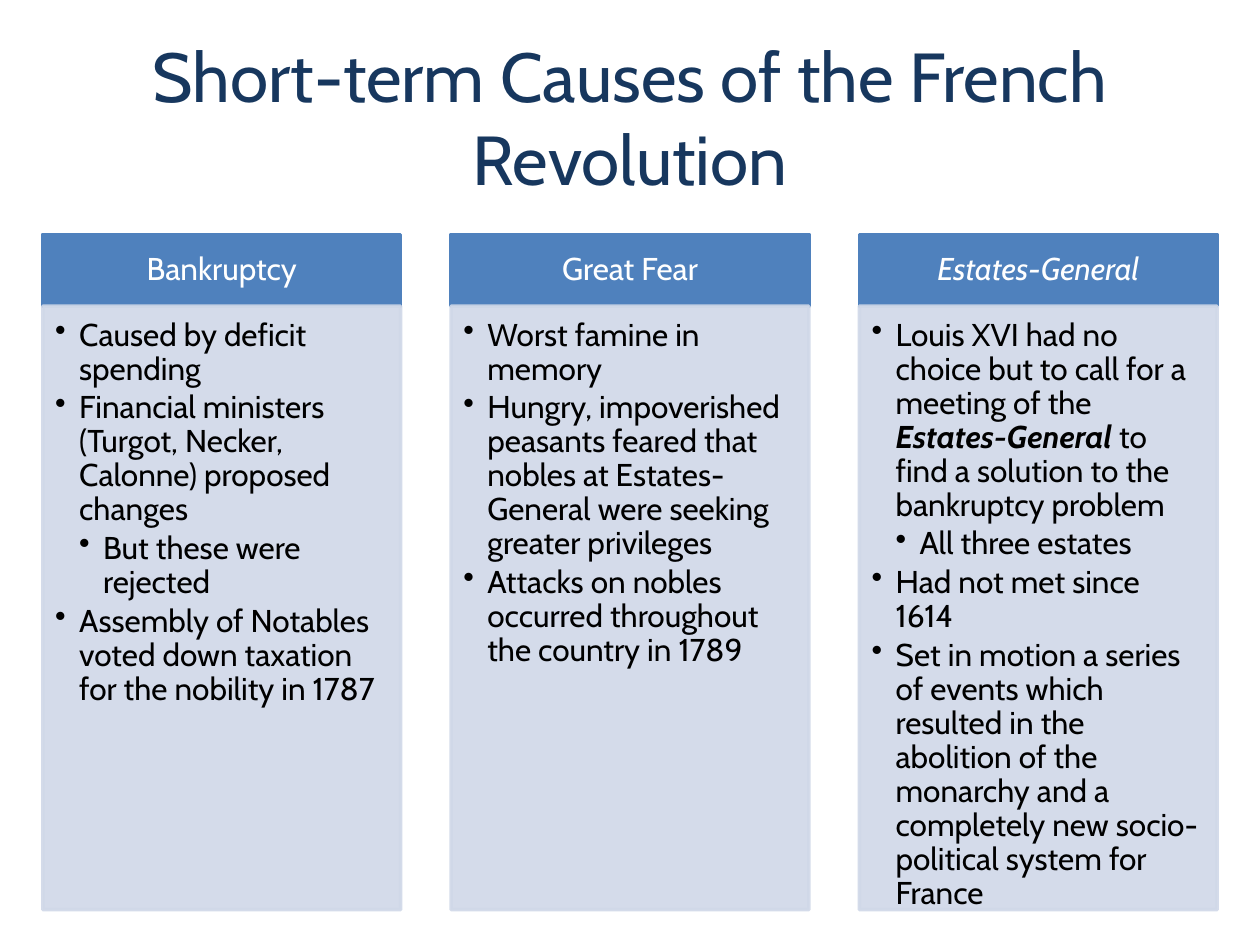
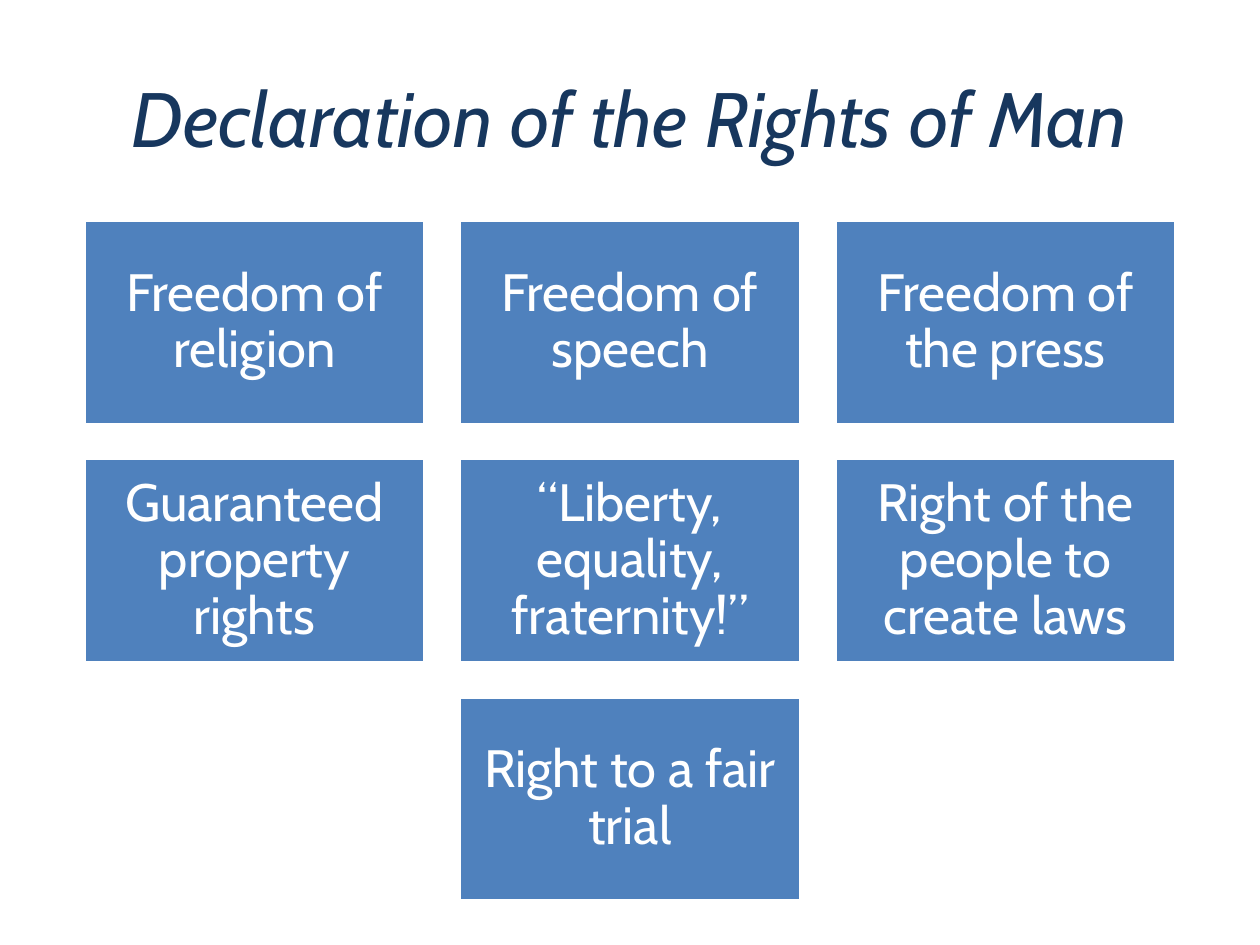
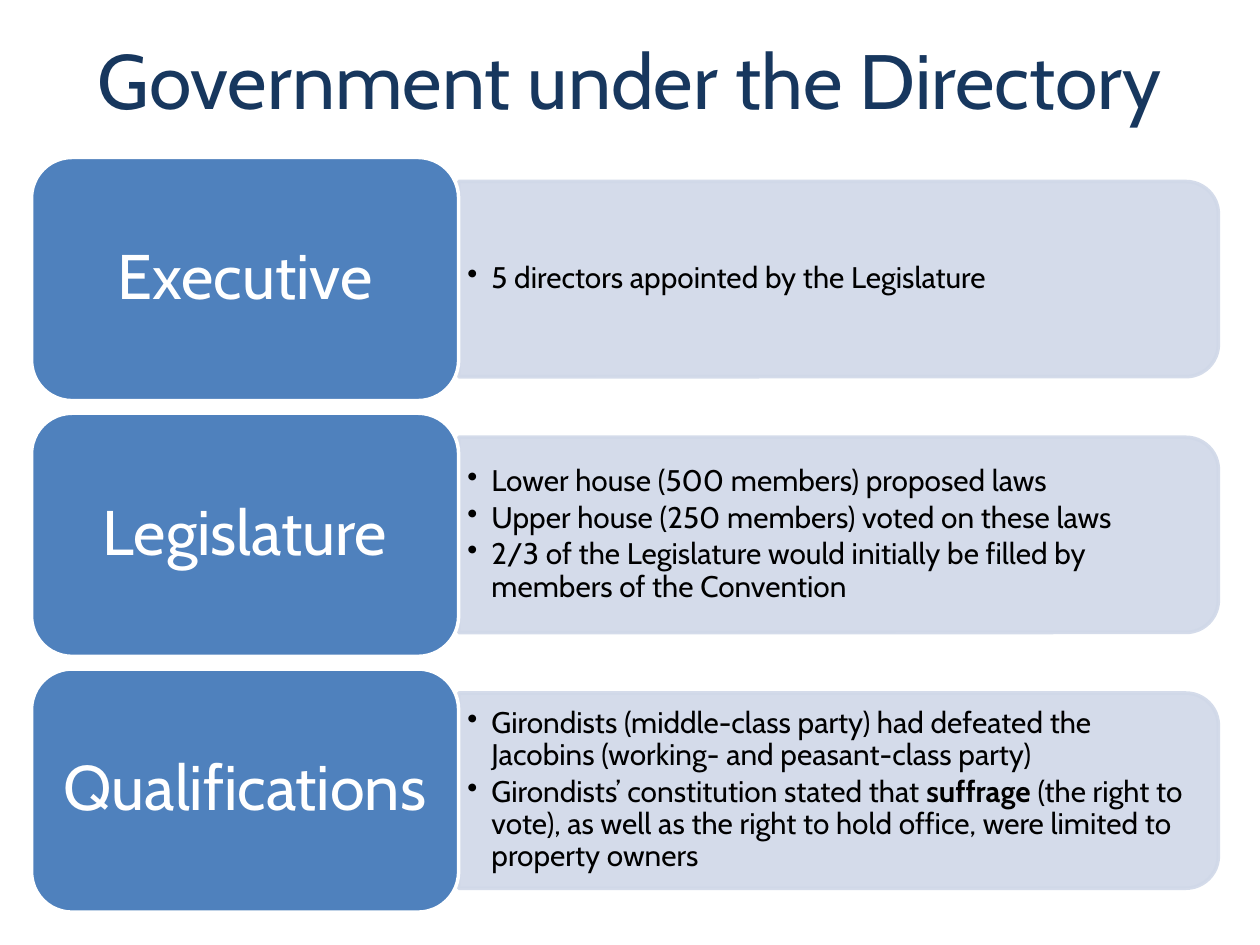
from dataclasses import dataclass

from lxml.etree import SubElement
from pptx import Presentation
from pptx.dml.color import RGBColor
from pptx.enum.shapes import MSO_SHAPE
from pptx.enum.text import MSO_ANCHOR, PP_ALIGN
from pptx.oxml.ns import qn
from pptx.util import Inches, Pt


@dataclass(frozen=True)
class Theme:
    font: str = "Cabin"
    title: str = "17375E"
    accent: str = "4F81BD"
    panel: str = "D0D8E8"
    light: str = "FFFFFF"
    dark: str = "000000"
    panel_opacity: int = 90
    title_size: float = 44
    long_title_size: float = 39.6
    column_size: float = 18
    tile_size: float = 30
    branch_size: float = 36
    detail_size: float = 17
    outline: float = 2
    line_spacing: float = 0.9
    bullet_gap: float = 0.15
    bullet_indent: float = 0.19


@dataclass(frozen=True)
class Span:
    text: str
    bold: bool = False
    italic: bool = False


@dataclass(frozen=True)
class Bullet:
    spans: tuple
    level: int = 1


THEME = Theme()
SLIDE_WIDTH, SLIDE_HEIGHT = 10, 7.5

CAUSES = [
    (Span("Bankruptcy"), [
        Bullet((Span("Caused by deficit spending"),)),
        Bullet((Span("Financial ministers (Turgot, Necker, Calonne) proposed changes"),)),
        Bullet((Span("But these were rejected"),), level=2),
        Bullet((Span("Assembly of Notables voted down taxation for the nobility in 1787"),)),
    ]),
    (Span("Great Fear"), [
        Bullet((Span("Worst famine in memory"),)),
        Bullet((Span("Hungry, impoverished peasants feared that nobles at "
                     "Estates-General were seeking greater privileges"),)),
        Bullet((Span("Attacks on nobles occurred throughout the country in 1789"),)),
    ]),
    (Span("Estates-General", italic=True), [
        Bullet((Span("Louis XVI had no choice but to call for a meeting of the "),
                Span("Estates-General ", bold=True, italic=True),
                Span("to find a solution to the bankruptcy problem"))),
        Bullet((Span("All three estates"),), level=2),
        Bullet((Span("Had not met since 1614"),)),
        Bullet((Span("Set in motion a series of events which resulted in the abolition of "
                     "the monarchy and a completely new socio-political system for France"),)),
    ]),
]

RIGHTS = [
    ["Freedom of religion", "Freedom of speech", "Freedom of the press"],
    ["Guaranteed property rights", "“Liberty, equality, fraternity!”",
     "Right of the people to create laws"],
    ["Right to a fair trial"],
]

BRANCHES = [
    ("Executive", [Bullet((Span("5 directors appointed by the Legislature"),))]),
    ("Legislature", [
        Bullet((Span("Lower house (500 members) proposed laws"),)),
        Bullet((Span("Upper house (250 members) voted on these laws"),)),
        Bullet((Span("2/3 of the Legislature would initially be filled by "
                     "members of the Convention"),)),
    ]),
    ("Qualifications", [
        Bullet((Span("Girondists (middle-class party) had defeated the Jacobins "
                     "(working- and peasant-class party)"),)),
        Bullet((Span("Girondists’ constitution stated that "),
                Span("suffrage", bold=True),
                Span(" (the right to vote), as well as the right to hold office, "
                     "were limited to property owners"))),
    ]),
]


def set_frame(box, anchor, insets):
    """Wrap the text and set left, top, right and bottom insets in inches."""
    frame = box.text_frame
    frame.word_wrap = True
    frame.vertical_anchor = anchor
    (frame.margin_left, frame.margin_top,
     frame.margin_right, frame.margin_bottom) = map(Inches, insets)
    return frame


def write_spans(para, spans, size, color):
    for span in spans:
        run = para.add_run()
        run.text = span.text
        font = run.font
        font.name, font.size = THEME.font, Pt(size)
        font.bold, font.italic = span.bold, span.italic
        font.color.rgb = RGBColor.from_string(color)


def write_label(box, span, size, insets):
    para = set_frame(box, MSO_ANCHOR.MIDDLE, insets).paragraphs[0]
    para.alignment = PP_ALIGN.CENTER
    para.line_spacing = THEME.line_spacing
    write_spans(para, [span], size, THEME.light)


def write_bullets(box, bullets, size, anchor, insets):
    frame = set_frame(box, anchor, insets)
    for index, bullet in enumerate(bullets):
        para = frame.add_paragraph() if index else frame.paragraphs[0]
        para.alignment = PP_ALIGN.LEFT
        para.level = bullet.level
        para.line_spacing = THEME.line_spacing
        para.space_after = Pt(size * THEME.bullet_gap)
        write_spans(para, bullet.spans, size, THEME.dark)
        properties = para._p.get_or_add_pPr()
        properties.set("marL", str(Inches(THEME.bullet_indent * bullet.level)))
        properties.set("indent", str(-Inches(THEME.bullet_indent)))
        SubElement(properties, qn("a:buChar")).set("char", "•")


def add_block(page, kind, place, fill, line, opacity=100):
    """Add a filled preset shape; opacity is a percentage for fill and line."""
    shape = page.shapes.add_shape(kind, *map(Inches, place))
    shape.shadow.inherit = False
    shape.fill.solid()
    shape.fill.fore_color.rgb = RGBColor.from_string(fill)
    shape.line.color.rgb = RGBColor.from_string(line)
    shape.line.width = Pt(THEME.outline)
    if opacity < 100:
        for color in shape._element.spPr.iter(qn("a:srgbClr")):
            SubElement(color, qn("a:alpha")).set("val", str(opacity * 1000))
    return shape


def add_panel(page, kind, place):
    return add_block(page, kind, place, THEME.panel, THEME.panel, THEME.panel_opacity)


def add_text_box(page, place):
    return page.shapes.add_textbox(*map(Inches, place))


def add_titled_page(deck, span, size=THEME.title_size, top=0.3):
    page = deck.slides.add_slide(deck.slide_layouts[6])
    box = add_text_box(page, (0.5, top, 9, 1.25))
    para = set_frame(box, MSO_ANCHOR.MIDDLE, (0.1, 0.05, 0.1, 0.05)).paragraphs[0]
    para.alignment = PP_ALIGN.CENTER
    write_spans(para, [span], size, THEME.title)
    return page


def add_cause_column(page, left, heading, bullets):
    top, width, heading_height, body_height = 1.86, 2.84, 0.57, 4.79
    header = add_block(page, MSO_SHAPE.RECTANGLE, (left, top, width, heading_height),
                       THEME.accent, THEME.accent)
    write_label(header, heading, THEME.column_size, (0.14, 0.08, 0.14, 0.08))
    body = add_panel(page, MSO_SHAPE.RECTANGLE,
                     (left, top + heading_height, width, body_height))
    write_bullets(body, bullets, THEME.column_size, MSO_ANCHOR.TOP, (0.1, 0.1, 0.14, 0.16))


def add_rights_grid(page, rows):
    """Lay out rows of tiles, each row centred on the slide."""
    top, width, height, gap = 1.75, 2.71, 1.62, 0.27
    for row, labels in enumerate(rows):
        row_width = len(labels) * (width + gap) - gap
        row_left = (SLIDE_WIDTH - row_width) / 2
        for column, label in enumerate(labels):
            place = (row_left + column * (width + gap), top + row * (height + gap),
                     width, height)
            tile = add_block(page, MSO_SHAPE.RECTANGLE, place, THEME.accent, THEME.light)
            write_label(tile, Span(label), THEME.tile_size, (0.12,) * 4)


def add_branch_row(page, top, name, bullets):
    left, width, height = 0.25, 3.39, 1.93
    panel_length, panel_depth = 6.03, 1.55
    text_width, text_height = 5.95, 1.4
    panel_left, middle = left + width, top + height / 2

    # The panel is drawn upright and turned so its rounded end faces right.
    panel = add_panel(page, MSO_SHAPE.ROUND_2_SAME_RECTANGLE,
                      (panel_left + (panel_length - panel_depth) / 2,
                       middle - panel_length / 2, panel_depth, panel_length))
    panel.rotation = 90
    details = add_text_box(page, (panel_left, middle - text_height / 2,
                                  text_width, text_height))
    write_bullets(details, bullets, THEME.detail_size, MSO_ANCHOR.MIDDLE,
                  (0.07, 0.04, 0.07, 0.04))
    tab = add_block(page, MSO_SHAPE.ROUNDED_RECTANGLE, (left, top, width, height),
                    THEME.accent, THEME.light)
    write_label(tab, Span(name), THEME.branch_size, (0.15, 0.07, 0.15, 0.07))


def main():
    deck = Presentation()
    deck.slide_width, deck.slide_height = Inches(SLIDE_WIDTH), Inches(SLIDE_HEIGHT)

    page = add_titled_page(deck, Span("Short-term Causes of the French Revolution"),
                           THEME.long_title_size)
    for index, (heading, bullets) in enumerate(CAUSES):
        add_cause_column(page, 0.34 + index * 3.24, heading, bullets)

    page = add_titled_page(deck, Span("Declaration of the Rights of Man", italic=True))
    add_rights_grid(page, RIGHTS)

    page = add_titled_page(deck, Span("Government under the Directory"), top=0)
    for index, (name, bullets) in enumerate(BRANCHES):
        add_branch_row(page, 1.25 + index * 2.03, name, bullets)

    deck.save("out.pptx")


if __name__ == "__main__":
    main()
